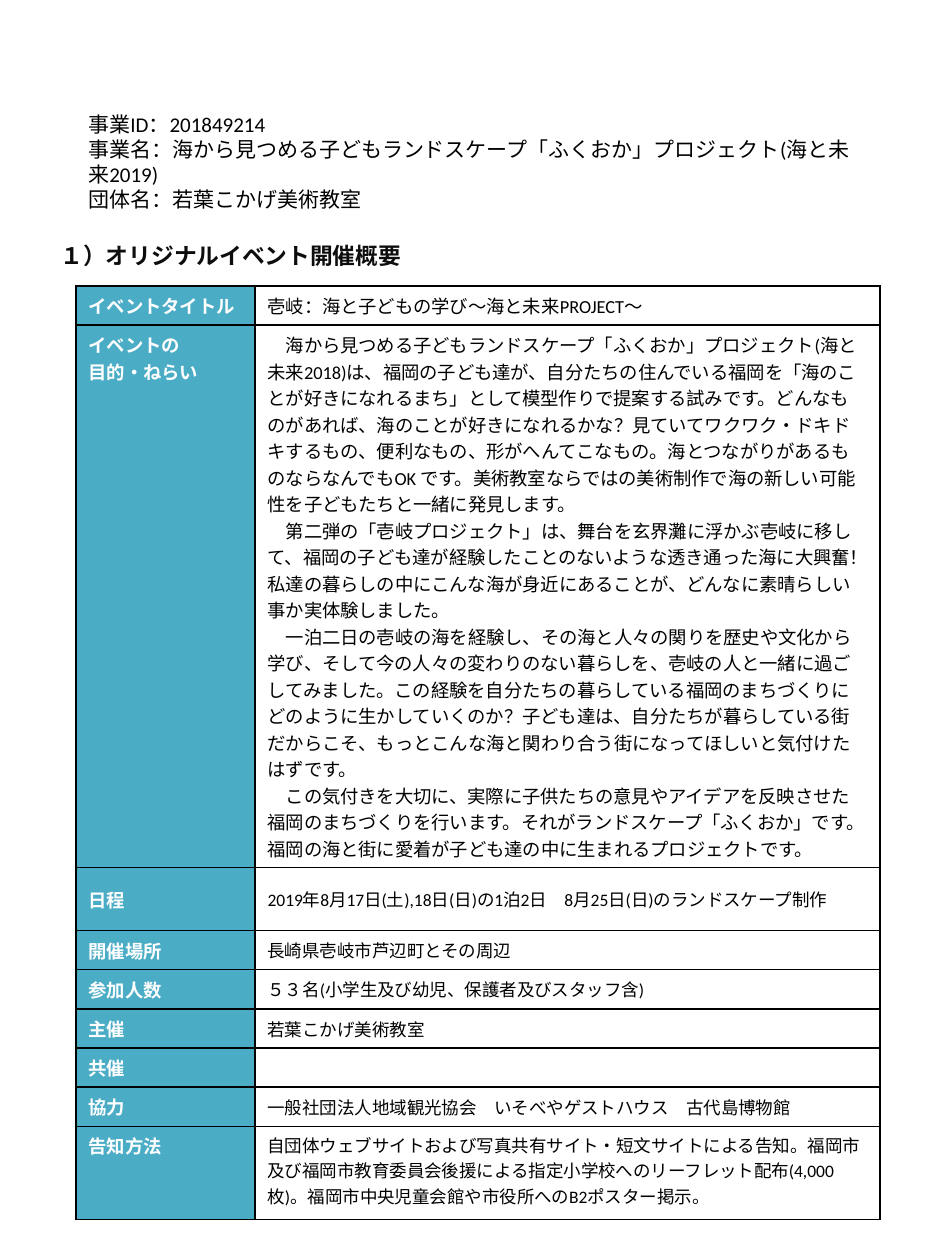
"""Build the one-page outline of a children's seaside art event."""
from dataclasses import dataclass

from lxml import etree
from pptx import Presentation
from pptx import util as u
from pptx.dml.color import RGBColor
from pptx.enum import text as t
from pptx.oxml.ns import qn

PX = 914400 / 126
COLORS = {"label": "4BACC6", "paper": "FFFFFF", "ink": "000000", "heading": "0D0D0D"}
FONT = "Calibri"
TOP, MIDDLE = t.MSO_ANCHOR.TOP, t.MSO_ANCHOR.MIDDLE


@dataclass(frozen=True)
class Entry:
    """One row of the outline: a label and its details."""
    label: str
    details: str
    size: float = 10
    height: int = 38
    label_anchor: t.MSO_ANCHOR = MIDDLE
    details_anchor: t.MSO_ANCHOR = MIDDLE


PURPOSE = "\n".join((
    "　海から見つめる子どもランドスケープ「ふくおか」プロジェクト(海と未来2018)は、福岡の子ども達が、"
    "自分たちの住んでいる福岡を「海のことが好きになれるまち」として模型作りで提案する試みです。"
    "どんなものがあれば、海のことが好きになれるかな？見ていてワクワク・ドキドキするもの、便利なもの、"
    "形がへんてこなもの。海とつながりがあるものならなんでもOK です。"
    "美術教室ならではの美術制作で海の新しい可能性を子どもたちと一緒に発見します。",
    "　第二弾の「壱岐プロジェクト」は、舞台を玄界灘に浮かぶ壱岐に移して、"
    "福岡の子ども達が経験したことのないような透き通った海に大興奮！"
    "私達の暮らしの中にこんな海が身近にあることが、どんなに素晴らしい事か実体験しました。",
    "　一泊二日の壱岐の海を経験し、その海と人々の関りを歴史や文化から学び、"
    "そして今の人々の変わりのない暮らしを、壱岐の人と一緒に過ごしてみました。"
    "この経験を自分たちの暮らしている福岡のまちづくりにどのように生かしていくのか？"
    "子ども達は、自分たちが暮らしている街だからこそ、"
    "もっとこんな海と関わり合う街になってほしいと気付けたはずです。",
    "　この気付きを大切に、実際に子供たちの意見やアイデアを反映させた福岡のまちづくりを行います。"
    "それがランドスケープ「ふくおか」です。"
    "福岡の海と街に愛着が子ども達の中に生まれるプロジェクトです。",
))
PUBLICITY = (
    "自団体ウェブサイトおよび写真共有サイト・短文サイトによる告知。"
    "福岡市及び福岡市教育委員会後援による指定小学校へのリーフレット配布(4,000枚)。"
    "福岡市中央児童会館や市役所へのB2ポスター掲示。"
)
ORGANIZER = "若葉こかげ美術教室"
PROJECT_INFO = "\n".join((
    "事業ID：201849214",
    "事業名：海から見つめる子どもランドスケープ「ふくおか」プロジェクト(海と未来2019)",
    f"団体名：{ORGANIZER}",
))
ENTRIES = (
    Entry("イベントタイトル", "壱岐：海と子どもの学び～海と未来PROJECT～", size=10.5),
    Entry("イベントの\n目的・ねらい", PURPOSE, size=10.5, height=422, label_anchor=TOP),
    Entry("日程", "2019年8月17日(土),18日(日)の1泊2日　8月25日(日)のランドスケープ制作"),
    Entry("開催場所", "長崎県壱岐市芦辺町とその周辺"),
    Entry("参加人数", "５３名(小学生及び幼児、保護者及びスタッフ含)"),
    Entry("主催", ORGANIZER),
    Entry("共催", ""),
    Entry("協力", "一般社団法人地域観光協会　いそべやゲストハウス　古代島博物館"),
    Entry("告知方法", PUBLICITY, height=93, label_anchor=TOP, details_anchor=TOP),
)


def px(length: int) -> u.Emu:
    """Turn pixels into EMU."""
    return u.Emu(round(length * PX))


def write(frame, content: str, *, size: float, color: str = "ink",
          bold: bool = False, spacing=None) -> None:
    """Fill a text frame with one formatted paragraph per line."""
    frame.word_wrap = True
    for index, line in enumerate(content.split("\n")):
        paragraph = frame.add_paragraph() if index else frame.paragraphs[0]
        paragraph.alignment = t.PP_ALIGN.LEFT
        if spacing:
            paragraph.line_spacing = spacing
        if not line:
            etree.SubElement(paragraph._p, qn("a:endParaRPr"), sz=str(round(size * 100)))
            continue
        run = paragraph.add_run()
        run.text = line
        run.font.name, run.font.size, run.font.bold = FONT, u.Pt(size), bold
        run.font.color.rgb = RGBColor.from_string(COLORS[color])


def style_cell(cell, fill: str, anchor: t.MSO_ANCHOR) -> None:
    """Give a cell its borders, fill and vertical anchor."""
    properties = cell._tc.get_or_add_tcPr()
    for side in ("lnL", "lnR", "lnT", "lnB"):
        border = etree.SubElement(properties, qn(f"a:{side}"), w=str(u.Pt(1)))
        solid = etree.SubElement(border, qn("a:solidFill"))
        etree.SubElement(solid, qn("a:srgbClr"), val=COLORS["ink"])
    cell.fill.solid()
    cell.fill.fore_color.rgb = RGBColor.from_string(COLORS[fill])
    cell.vertical_anchor = anchor


def add_outline(slide, entries: tuple[Entry, ...]) -> None:
    """Add the event outline table."""
    widths = (179, 625)
    height = sum(entry.height for entry in entries)
    outline = slide.shapes.add_table(
        len(entries), 2, px(76), px(286), px(sum(widths)), px(height)).table
    outline.first_row = outline.horz_banding = False
    for column, width in zip(outline.columns, widths):
        column.width = px(width)
    for row, entry in zip(outline.rows, entries):
        row.height = px(entry.height)
        label, details = row.cells
        style_cell(label, "label", entry.label_anchor)
        write(label.text_frame, entry.label, size=10.5, color="paper", bold=True)
        style_cell(details, "paper", entry.details_anchor)
        write(details.text_frame, entry.details, size=entry.size)


def main() -> None:
    """Build and save the slide."""
    deck = Presentation()
    deck.slide_width, deck.slide_height = px(945), px(1260)
    slide = deck.slides.add_slide(deck.slide_layouts[5])

    heading = slide.shapes.title
    heading.left, heading.top, heading.width, heading.height = map(px, (48, 236, 426, 39))
    heading.text_frame.auto_size = t.MSO_AUTO_SIZE.NONE
    heading.text_frame.vertical_anchor = MIDDLE
    write(heading.text_frame, "１）オリジナルイベント開催概要", size=13, color="heading", bold=True)

    add_outline(slide, ENTRIES)

    project = slide.shapes.add_textbox(*map(px, (76, 105, 795, 89)))
    project.text_frame.auto_size = t.MSO_AUTO_SIZE.SHAPE_TO_FIT_TEXT
    write(project.text_frame, PROJECT_INFO, size=12, spacing=u.Pt(14.4))

    deck.save("out.pptx")


if __name__ == "__main__":
    main()
